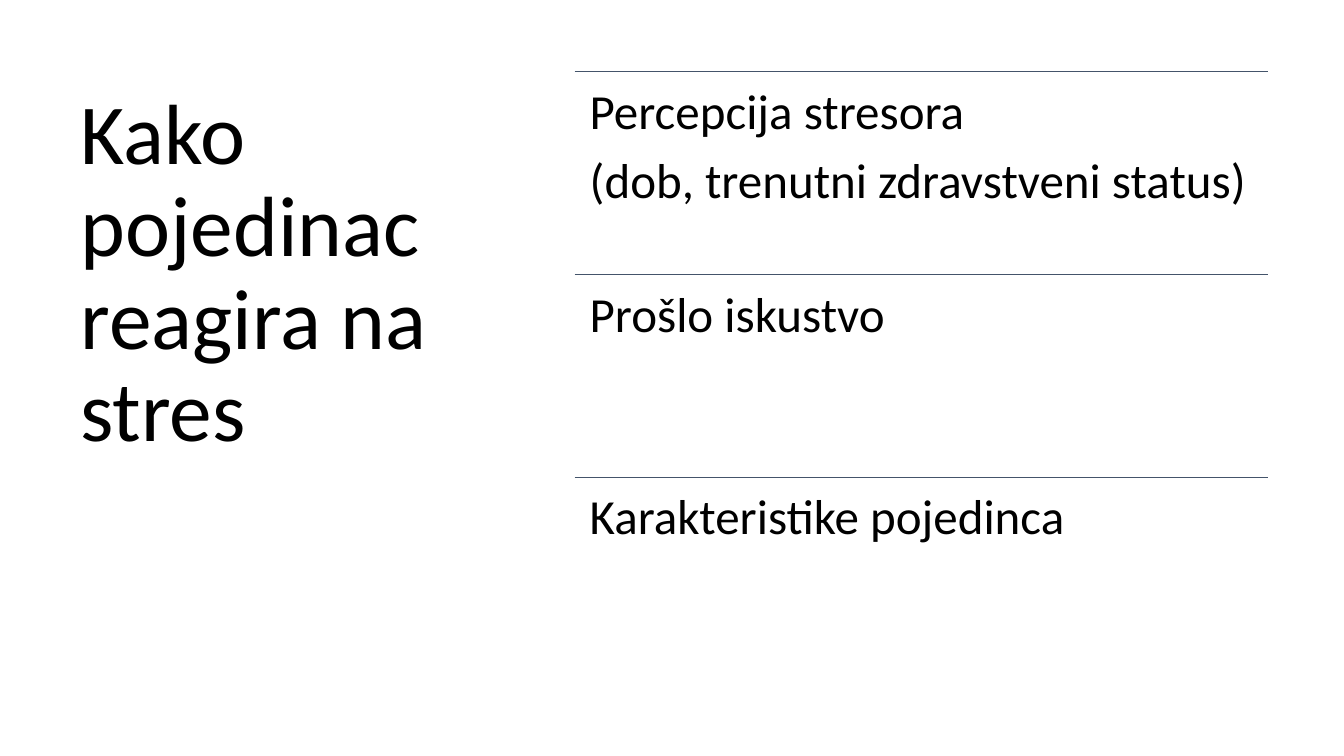
from dataclasses import dataclass

from lxml.etree import SubElement
from pptx import Presentation
from pptx.dml.color import RGBColor
from pptx.enum.shapes import MSO_CONNECTOR
from pptx.enum.text import MSO_ANCHOR, PP_ALIGN
from pptx.oxml.ns import qn
from pptx.util import Pt


@dataclass(frozen=True)
class Theme:
    font: str = "Calibri"
    text: RGBColor = RGBColor(0x00, 0x00, 0x00)
    rule: RGBColor = RGBColor(0x44, 0x54, 0x6A)
    title_size: float = 61
    body_size: float = 35
    line_spacing: float = 0.9
    body_gap: float = 12


THEME = Theme()

TITLE = "Kako pojedinac reagira na stres"
FACTORS = [
    ["Percepcija stresora", "(dob, trenutni zdravstveni status)"],
    ["Prošlo iskustvo"],
    ["Karakteristike pojedinca"],
]

# Factor list geometry, in points
LIST_LEFT, LIST_TOP, LIST_WIDTH, ROW_HEIGHT = 410.4, 51.1, 495.4, 145


def add_text(page, area, lines, size, insets, anchor=MSO_ANCHOR.TOP, gap=0):
    box = page.shapes.add_textbox(*(Pt(length) for length in area))
    frame = box.text_frame
    frame.word_wrap = True
    frame.vertical_anchor = anchor
    side, edge = insets
    frame.margin_left = frame.margin_right = Pt(side)
    frame.margin_top = frame.margin_bottom = Pt(edge)
    for index, line in enumerate(lines):
        para = frame.add_paragraph() if index else frame.paragraphs[0]
        para.alignment = PP_ALIGN.LEFT
        para.line_spacing = THEME.line_spacing
        para.space_after = Pt(gap)
        span = para.add_run()
        span.text = line
        span.font.name = THEME.font
        span.font.size = Pt(size)
        span.font.color.rgb = THEME.text


def add_rule(page, left, top, width):
    rule = page.shapes.add_connector(
        MSO_CONNECTOR.STRAIGHT, Pt(left), Pt(top), Pt(left + width), Pt(top))
    rule.line.color.rgb = THEME.rule
    rule.line.width = Pt(1)
    SubElement(rule.element.spPr, qn("a:effectLst"))


def add_factor(page, top, lines):
    add_rule(page, LIST_LEFT, top, LIST_WIDTH)
    add_text(page, (LIST_LEFT, top, LIST_WIDTH, ROW_HEIGHT), lines,
             THEME.body_size, insets=(10.8, 10.8), gap=THEME.body_gap)


def main():
    deck = Presentation()
    deck.slide_width, deck.slide_height = Pt(960), Pt(540)
    page = deck.slides.add_slide(deck.slide_layouts[6])

    # Title on the left
    add_text(page, (50.4, 50.4, 281.5, 281.5), [TITLE], THEME.title_size,
             insets=(7.2, 3.6), anchor=MSO_ANCHOR.BOTTOM)

    # Ruled factors on the right
    for row, lines in enumerate(FACTORS):
        add_factor(page, LIST_TOP + row * ROW_HEIGHT, lines)

    deck.save("out.pptx")


if __name__ == "__main__":
    main()
